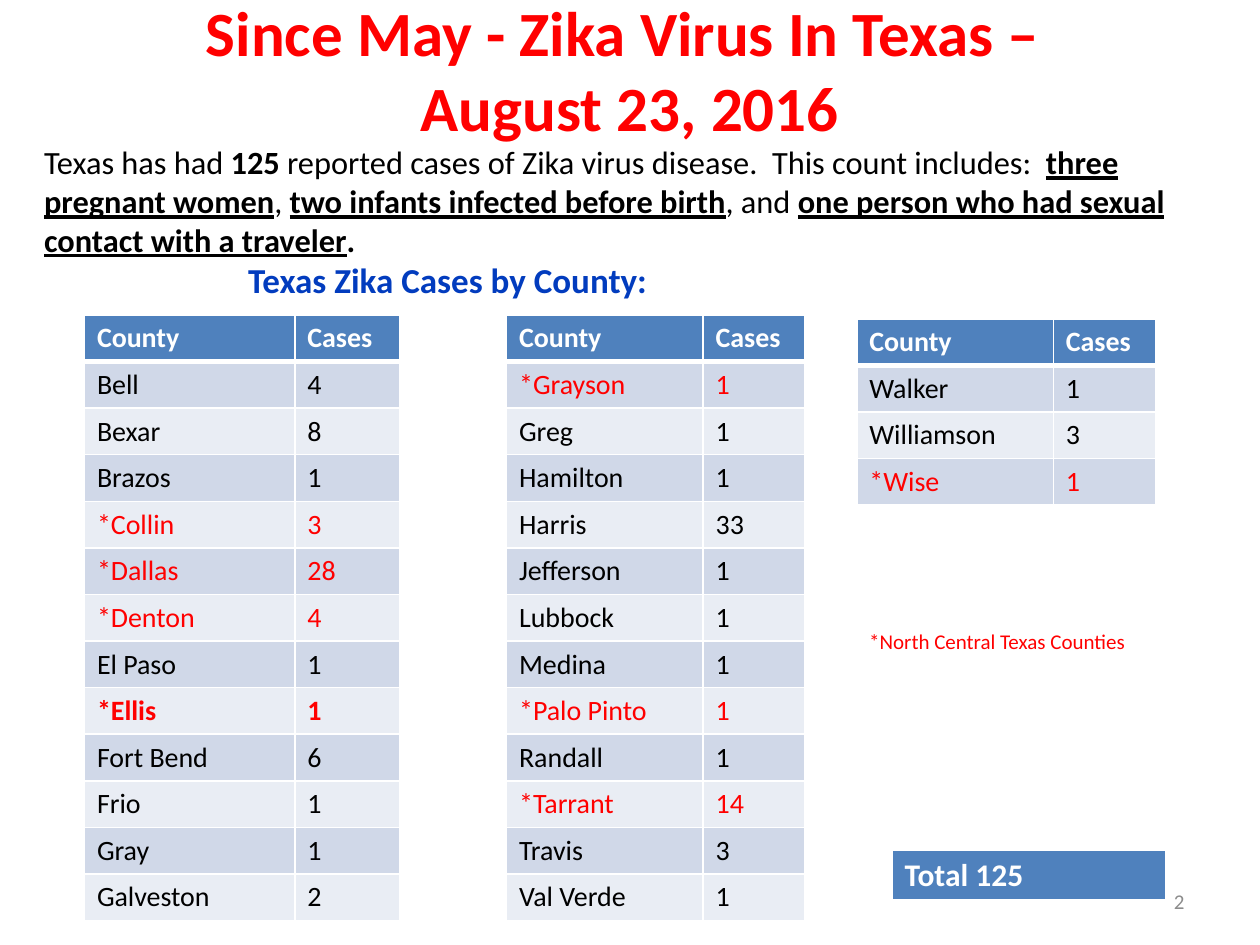
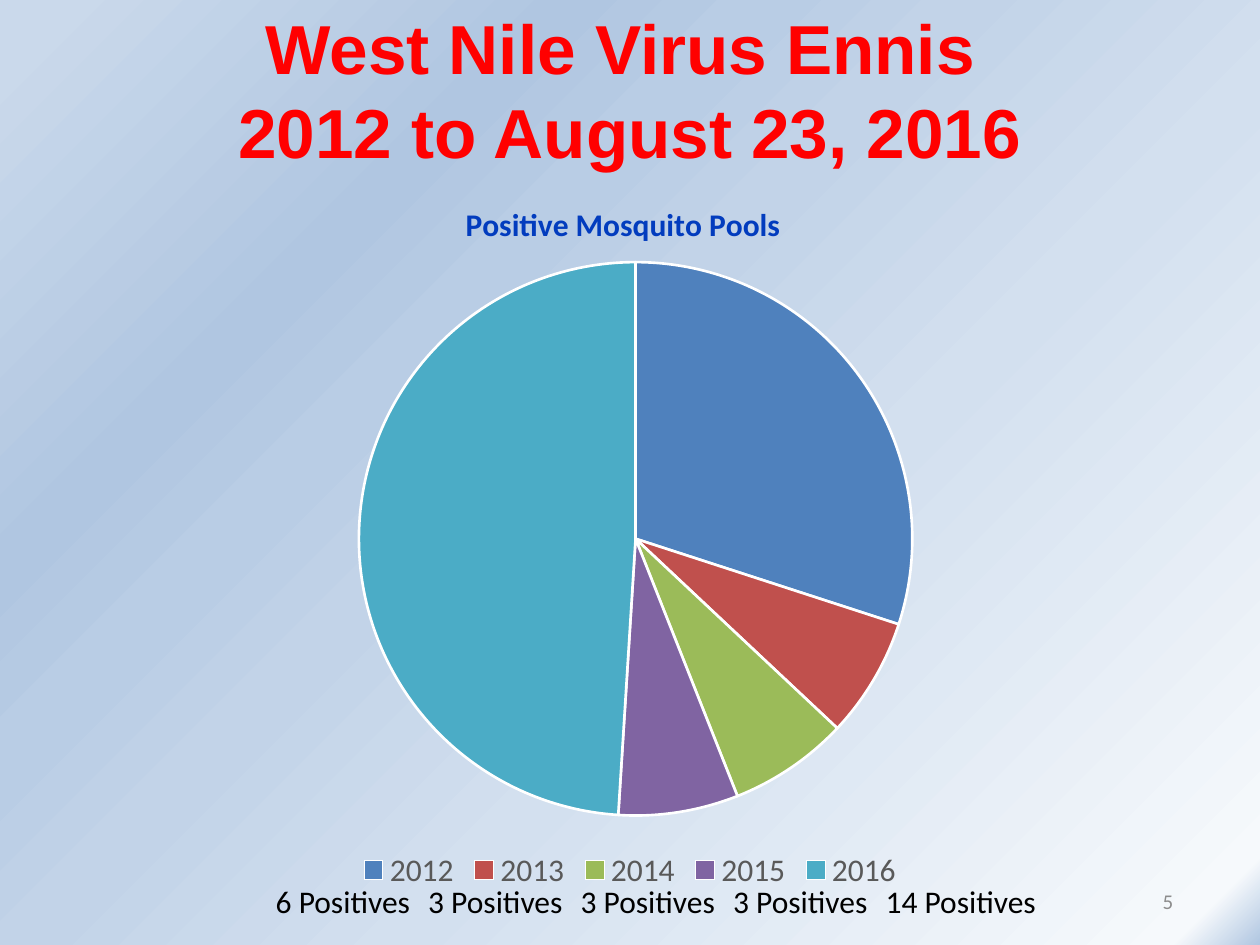
from dataclasses import dataclass

from lxml.etree import SubElement
from pptx import Presentation
from pptx.chart.data import CategoryChartData
from pptx.dml.color import RGBColor
from pptx.enum.chart import XL_CHART_TYPE, XL_LEGEND_POSITION
from pptx.enum.text import MSO_ANCHOR, MSO_AUTO_SIZE, PP_ALIGN
from pptx.oxml.ns import qn
from pptx.util import Inches, Pt

RED = RGBColor(0xFF, 0x00, 0x00)
BLACK = RGBColor(0x00, 0x00, 0x00)
WHITE = RGBColor(0xFF, 0xFF, 0xFF)
GRAY = RGBColor(0x8C, 0x8C, 0x8C)
LEGEND_GRAY = RGBColor(0x59, 0x59, 0x59)
HEADING_BLUE = RGBColor(0x02, 0x3C, 0xBE)
HEADER_BLUE = RGBColor(0x4F, 0x81, 0xBD)
BANDS = (RGBColor(0xE9, 0xED, 0xF4), RGBColor(0xD0, 0xD8, 0xE8))
SLICE_COLORS = (
    HEADER_BLUE,
    RGBColor(0xC0, 0x50, 0x4D),
    RGBColor(0x9B, 0xBB, 0x59),
    RGBColor(0x80, 0x64, 0xA2),
    RGBColor(0x4B, 0xAC, 0xC6),
)
BACKGROUND_STOPS = (
    (0, "B0C6E1"), (4, "F6F9FC"), (39, "D3E0EF"), (56, "C2D3E8"), (65, "B9CDE5"),
    (70, "B5CAE3"), (72, "B3C8E2"), (74, "B0C6E1"), (97, "CAD9EB"),
)
ROW_HEIGHT = 0.37


@dataclass(frozen=True)
class Box:
    left: float
    top: float
    width: float
    height: float

    def lengths(self):
        return tuple(Inches(v) for v in (self.left, self.top, self.width, self.height))


@dataclass(frozen=True)
class Style:
    size: float
    color: RGBColor = BLACK
    bold: bool = False
    font: str = "Calibri"
    align: PP_ALIGN = PP_ALIGN.LEFT
    anchor: MSO_ANCHOR = MSO_ANCHOR.TOP


@dataclass(frozen=True)
class CountyTable:
    left: float
    top: float
    col_widths: tuple[float, float]
    cases: dict[str, int]


COUNTY_TABLES = (
    CountyTable(0.67, 2.5, (1.67, 0.83), {
        "Bell": 4, "Bexar": 8, "Brazos": 1, "*Collin": 3, "*Dallas": 28, "*Denton": 4,
        "El Paso": 1, "*Ellis": 1, "Fort Bend": 6, "Frio": 1, "Gray": 1, "Galveston": 2,
    }),
    CountyTable(4.02, 2.5, (1.56, 0.81), {
        "*Grayson": 1, "Greg": 1, "Hamilton": 1, "Harris": 33, "Jefferson": 1, "Lubbock": 1,
        "Medina": 1, "*Palo Pinto": 1, "Randall": 1, "*Tarrant": 14, "Travis": 3, "Val Verde": 1,
    }),
    CountyTable(6.8, 2.53, (1.56, 0.81), {"Walker": 1, "Williamson": 3, "*Wise": 1}),
)
SUMMARY = (
    ("Texas has had ", False, False),
    ("125 ", True, False),
    ("reported cases of Zika virus disease.  This count includes:  ", False, False),
    ("three pregnant women", True, True),
    (", ", False, False),
    ("two infants infected before birth", True, True),
    (", and ", False, False),
    ("one person who had sexual contact with a traveler", True, True),
    (".", True, False),
)
POOLS = {"2012": 30, "2013": 7, "2014": 7, "2015": 7, "2016": 49}
POSITIVES = (6, 3, 3, 3, 14)

HEADING = Style(20, HEADING_BLUE, True, align=PP_ALIGN.CENTER, anchor=MSO_ANCHOR.MIDDLE)
PAGE_NUMBER = Style(12, GRAY, align=PP_ALIGN.RIGHT, anchor=MSO_ANCHOR.MIDDLE)
TABLE_HEADER = Style(16, WHITE, True)


def format_font(font, style: Style) -> None:
    font.size = Pt(style.size)
    font.name = style.font
    font.bold = style.bold
    font.color.rgb = style.color


def write(tf, text: str, style: Style) -> None:
    tf.word_wrap = True
    tf.vertical_anchor = style.anchor
    p = tf.paragraphs[0]
    p.alignment = style.align
    for i, line in enumerate(text.split("\n")):
        if i:
            p.add_line_break()
        r = p.add_run()
        r.text = line
        format_font(r.font, style)


def move(sp, box: Box) -> None:
    sp.left, sp.top, sp.width, sp.height = box.lengths()


def add_title(slide, top: float, text: str, size: float, font: str) -> None:
    title = slide.shapes.title
    move(title, Box(0.5, top, 9, 1.25))
    title.text_frame.auto_size = MSO_AUTO_SIZE.NONE
    write(title.text_frame, text,
          Style(size, RED, True, font, PP_ALIGN.CENTER, MSO_ANCHOR.MIDDLE))


def add_text(slide, box: Box, text: str, style: Style):
    tf = slide.shapes.add_textbox(*box.lengths()).text_frame
    write(tf, text, style)
    return tf


def add_summary(slide) -> None:
    body = slide.placeholders[1]
    move(body, Box(0.25, 1.08, 9.58, 1))
    tf = body.text_frame
    tf.auto_size = MSO_AUTO_SIZE.NONE
    p = tf.paragraphs[0]
    p.space_before = Pt(0)
    pPr = p._p.get_or_add_pPr()
    pPr.set("marL", "0")
    pPr.set("indent", "0")
    SubElement(pPr, qn("a:buNone"))
    for text, bold, underline in SUMMARY:
        r = p.add_run()
        r.text = text
        format_font(r.font, Style(18.5, bold=bold))
        r.font.underline = underline


def fill_cell(cell, text: str, style: Style, fill: RGBColor, bottom: float = 1) -> None:
    write(cell.text_frame, text, style)
    tcPr = cell._tc.get_or_add_tcPr()
    for side, width in (("L", 1), ("R", 1), ("T", 1), ("B", bottom)):
        ln = SubElement(tcPr, qn(f"a:ln{side}"), w=str(Pt(width)))
        SubElement(SubElement(ln, qn("a:solidFill")), qn("a:srgbClr"), val=str(WHITE))
    cell.fill.solid()
    cell.fill.fore_color.rgb = fill


def add_county_table(slide, spec_table: CountyTable) -> None:
    rows = [("County", "Cases"), *spec_table.cases.items()]
    box = Box(spec_table.left, spec_table.top, sum(spec_table.col_widths), ROW_HEIGHT * len(rows))
    table = slide.shapes.add_table(len(rows), 2, *box.lengths()).table
    for column, width in zip(table.columns, spec_table.col_widths):
        column.width = Inches(width)
    for i, row in enumerate(rows):
        county = row[0]
        table.rows[i].height = Inches(ROW_HEIGHT)
        body = Style(16, RED if county.startswith("*") else BLACK, county == "*Ellis")
        for j, value in enumerate(row):
            cell = table.cell(i, j)
            if i == 0:
                fill_cell(cell, value, TABLE_HEADER, HEADER_BLUE, 3)
            else:
                fill_cell(cell, str(value), body, BANDS[i % 2])


def add_total(slide) -> None:
    table = slide.shapes.add_table(1, 1, *Box(7.08, 6.75, 2.17, 0.4).lengths()).table
    fill_cell(table.cell(0, 0), "Total 125", Style(18, WHITE, True), HEADER_BLUE, 3)


def set_gradient_background(slide) -> None:
    slide.background.fill.solid()
    bgPr = slide._element.find(".//" + qn("p:bgPr"))
    bgPr.remove(bgPr[0])
    grad = SubElement(bgPr, qn("a:gradFill"), rotWithShape="1")
    bgPr.insert(0, grad)
    stops = SubElement(grad, qn("a:gsLst"))
    for percent, color in BACKGROUND_STOPS:
        gs = SubElement(stops, qn("a:gs"), pos=str(percent * 1000))
        SubElement(gs, qn("a:srgbClr"), val=color)
    circle = SubElement(grad, qn("a:path"))
    circle.set("path", "circle")
    SubElement(circle, qn("a:fillToRect"), l="100000", t="100000")


def set_layout(element, index: int, **values) -> None:
    old = element.find(qn("c:layout"))
    if old is not None:
        element.remove(old)
    layout = SubElement(element, qn("c:layout"))
    element.insert(index, layout)
    manual = SubElement(layout, qn("c:manualLayout"))
    if "w" in values:
        SubElement(manual, qn("c:layoutTarget"), val="inner")
    for axis in ("x", "y"):
        SubElement(manual, qn(f"c:{axis}Mode"), val="edge")
    for name, value in values.items():
        SubElement(manual, qn(f"c:{name}"), val=str(value))


def add_pools_chart(slide) -> None:
    data = CategoryChartData()
    data.categories = list(POOLS)
    data.add_series("Series 1", list(POOLS.values()))
    chart = slide.shapes.add_chart(
        XL_CHART_TYPE.PIE, *Box(0.5, 1.33, 9, 5.78).lengths(), data).chart
    format_font(chart.font, Style(10))
    chart.has_title = True
    write(chart.chart_title.text_frame, "Positive Mosquito Pools", Style(18, HEADING_BLUE, True))
    chart.has_legend = True
    chart.legend.position = XL_LEGEND_POSITION.BOTTOM
    chart.legend.include_in_layout = False
    format_font(chart.legend.font, Style(18, LEGEND_GRAY))
    plot = chart.plots[0]
    plot.vary_by_categories = True
    for i, color in enumerate(SLICE_COLORS):
        slice_format = plot.series[0].points[i].format
        slice_format.fill.solid()
        slice_format.fill.fore_color.rgb = color
        slice_format.line.color.rgb = WHITE
        slice_format.line.width = Pt(1.5)
    root = chart._chartSpace
    set_layout(root.find(".//" + qn("c:title")), 1, x=0.35, y=0.04)
    set_layout(root.find(".//" + qn("c:plotArea")), 0, x=0.26, y=0.13, w=0.49, h=0.76)


def add_positives(slide) -> None:
    text = "\t".join(f"{count} Positives" for count in POSITIVES)
    tf = add_text(slide, Box(2.09, 6.95, 6.74, 0.4), text, Style(18))
    tabs = SubElement(tf.paragraphs[0]._p.get_or_add_pPr(), qn("a:tabLst"))
    for i in range(1, len(POSITIVES)):
        SubElement(tabs, qn("a:tab"), pos=str(Inches(1.21 * i)), algn="l")


def build_zika_slide(prs) -> None:
    slide = prs.slides.add_slide(prs.slide_layouts[1])
    add_title(slide, -0.08, "Since May - Zika Virus In Texas – \nAugust 23, 2016", 36, "Calibri")
    add_summary(slide)
    add_text(slide, Box(7.17, 6.95, 2.33, 0.4), "2", PAGE_NUMBER)
    add_text(slide, Box(1, 2.02, 5.17, 0.4), "Texas Zika Cases by County: ", HEADING)
    for county_table in COUNTY_TABLES:
        add_county_table(slide, county_table)
    add_total(slide)
    add_text(slide, Box(6.8, 4.94, 2.45, 0.3), "*North Central Texas Counties", Style(12, RED))


def build_west_nile_slide(prs) -> None:
    slide = prs.slides.add_slide(prs.slide_layouts[5])
    set_gradient_background(slide)
    add_title(slide, 0.08, "West Nile Virus Ennis \n2012 to August 23, 2016", 39.6, "Arial")
    add_text(slide, Box(1.83, 6.95, 7.58, 0.4), "5", PAGE_NUMBER)
    add_pools_chart(slide)
    add_positives(slide)


def main() -> None:
    prs = Presentation()
    prs.slide_width, prs.slide_height = Inches(10), Inches(7.5)
    build_zika_slide(prs)
    build_west_nile_slide(prs)
    prs.save("out.pptx")


if __name__ == "__main__":
    main()
